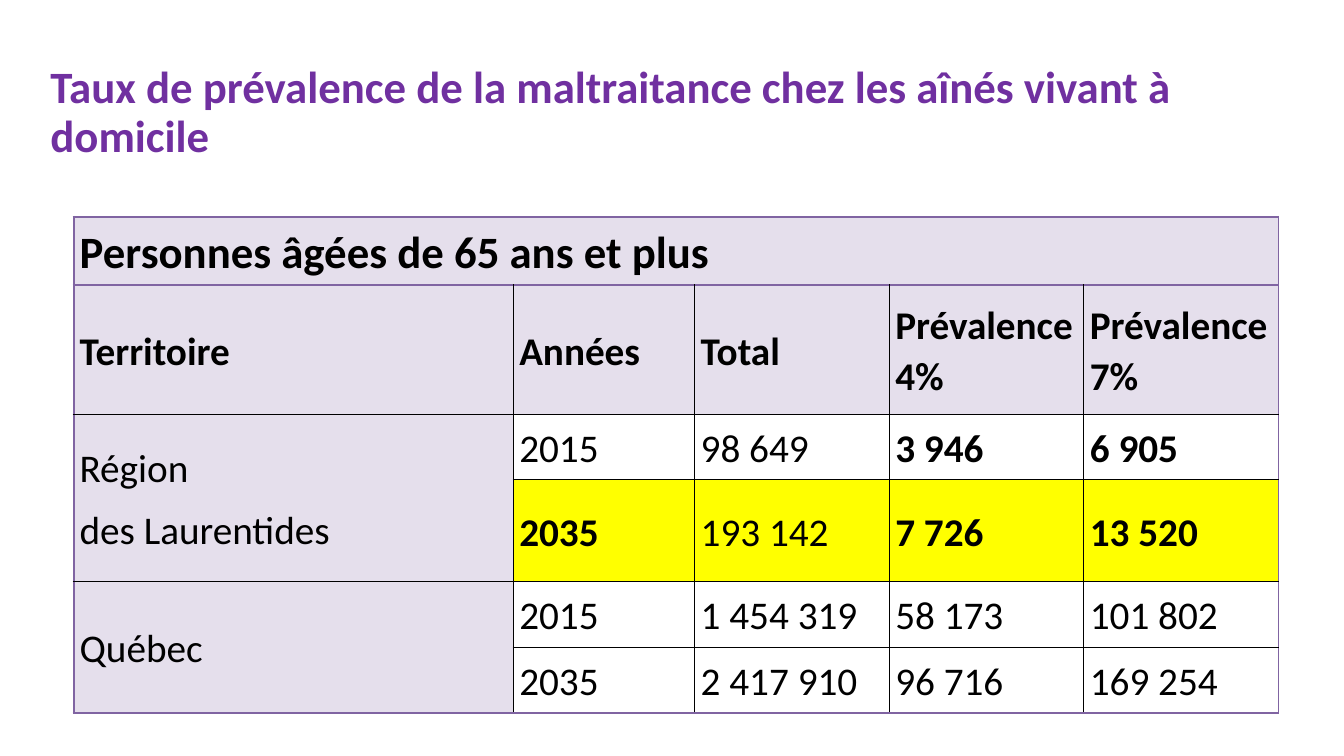
from itertools import product

from lxml.etree import SubElement
from pptx import Presentation
from pptx.dml.color import RGBColor
from pptx.enum.text import MSO_ANCHOR, MSO_AUTO_SIZE, PP_ALIGN
from pptx.oxml.ns import qn
from pptx.util import Inches, Pt

COLORS = {
    "title": "7030A0",
    "ink": "000000",
    "frame": "8064A2",
    "heading": "E5DFEC",
    "highlight": "FFFF00",
}
CELL_FORMAT = {
    "vertical_anchor": MSO_ANCHOR.MIDDLE,
    "margin_left": Inches(0.06),
    "margin_right": Inches(0.06),
    "margin_top": Inches(0.01),
    "margin_bottom": 0,
}
CELL_PARAGRAPH = {
    "alignment": PP_ALIGN.JUSTIFY,
    "line_spacing": 1.07,
    "space_after": Pt(8),
}
TITLE_FRAME = {
    "vertical_anchor": MSO_ANCHOR.MIDDLE,
    "word_wrap": True,
    "auto_size": MSO_AUTO_SIZE.SHAPE_TO_FIT_TEXT,
}
TITLE_PARAGRAPH = {"alignment": PP_ALIGN.LEFT, "line_spacing": 0.9}
TABLE_FLAGS = {"first_row": False, "horz_banding": False}

COLUMN_SHARES = [32.71, 13.5, 14.48, 14.48, 14.48]
ROW_SHARES = [9.07, 17.07, 8.67, 13.47, 8.67, 8.67]
PREVALENCE = [
    ["Personnes âgées de 65 ans et plus", "", "", "", ""],
    ["Territoire", "Années", "Total", "Prévalence 4%", "Prévalence 7%"],
    ["Région\ndes Laurentides", "2015", "98 649", "3 946", "6 905"],
    ["", "2035", "193 142", "7 726", "13 520"],
    ["Québec", "2015", "1 454 319", "58 173", "101 802"],
    ["", "2035", "2 417 910", "96 716", "169 254"],
]
MERGES = [((0, 0), (0, 4)), ((2, 0), (3, 0)), ((4, 0), (5, 0))]
HIGHLIGHT_ROW = 3
BOLD_FIGURES = {(2, 3), (2, 4), (3, 1), (3, 3), (3, 4)}


def apply(target, values):
    for name, value in values.items():
        setattr(target, name, value)


class SlideBuilder:
    font_name = "Calibri"

    def __init__(self, deck):
        self.deck = deck
        self.slide = deck.slides.add_slide(deck.slide_layouts[5])

    def across(self, percent):
        return round(self.deck.slide_width * percent / 100)

    def down(self, percent):
        return round(self.deck.slide_height * percent / 100)

    def box(self, left, top, width, height):
        return self.across(left), self.down(top), self.across(width), self.down(height)

    def wording(self, frame, text, paragraph_format, size, color, bold):
        frame.text = text
        for paragraph in frame.paragraphs:
            apply(paragraph, paragraph_format)
            for run in paragraph.runs:
                apply(run.font, {"name": self.font_name, "size": Pt(size), "bold": bold})
                run.font.color.rgb = RGBColor.from_string(COLORS[color])

    def title(self, text, *place):
        heading = self.slide.shapes.title
        apply(heading, dict(zip(("left", "top", "width", "height"), self.box(*place))))
        apply(heading.text_frame, TITLE_FRAME)
        self.wording(heading.text_frame, text, TITLE_PARAGRAPH, 32, "title", True)

    def borders(self, cell, framed_edges):
        properties = cell._tc.get_or_add_tcPr()
        for edge, framed in framed_edges.items():
            width, color = (1.5, "frame") if framed else (1, "ink")
            line = SubElement(properties, qn(f"a:{edge}"), w=str(Pt(width)))
            solid = SubElement(line, qn("a:solidFill"))
            SubElement(solid, qn("a:srgbClr"), val=COLORS[color])

    def cell(self, cell, text, size, bold, fill, framed_edges):
        apply(cell, CELL_FORMAT)
        self.wording(cell.text_frame, text, CELL_PARAGRAPH, size, "ink", bold)
        self.borders(cell, framed_edges)
        if fill:
            cell.fill.solid()
            cell.fill.fore_color.rgb = RGBColor.from_string(COLORS[fill])
        else:
            cell.fill.background()

    def table(self, content, left, top, columns, rows, merges):
        place = self.box(left, top, sum(columns), sum(rows))
        grid = self.slide.shapes.add_table(len(rows), len(columns), *place).table
        apply(grid, TABLE_FLAGS)
        for column, share in zip(grid.columns, columns):
            column.width = self.across(share)
        for row, share in zip(grid.rows, rows):
            row.height = self.down(share)
        for first, last in merges:
            grid.cell(*first).merge(grid.cell(*last))
        for r, c in product(range(len(rows)), range(len(columns))):
            cell = grid.cell(r, c)
            bottom = r + (cell.span_height if cell.is_merge_origin else 1)
            framed_edges = {
                "lnL": r == 0 or c == 0,
                "lnR": r == 0 or c == len(columns) - 1,
                "lnT": r <= 1,
                "lnB": bottom in (1, len(rows)),
            }
            if r < 2 or c == 0:
                fill = "heading"
            else:
                fill = "highlight" if r == HIGHLIGHT_ROW else None
            bold = r < 2 or (r, c) in BOLD_FIGURES
            self.cell(cell, content[r][c], 28 if r else 32, bold, fill, framed_edges)


def main():
    deck = Presentation()
    apply(deck, {"slide_width": Inches(13.33), "slide_height": Inches(7.5)})
    builder = SlideBuilder(deck)
    builder.table(PREVALENCE, 5.48, 28.67, COLUMN_SHARES, ROW_SHARES, MERGES)
    builder.title(
        "Taux de prévalence de la maltraitance chez les aînés vivant à domicile",
        3, 11.07, 94, 7.87,
    )
    deck.save("out.pptx")


if __name__ == "__main__":
    main()
